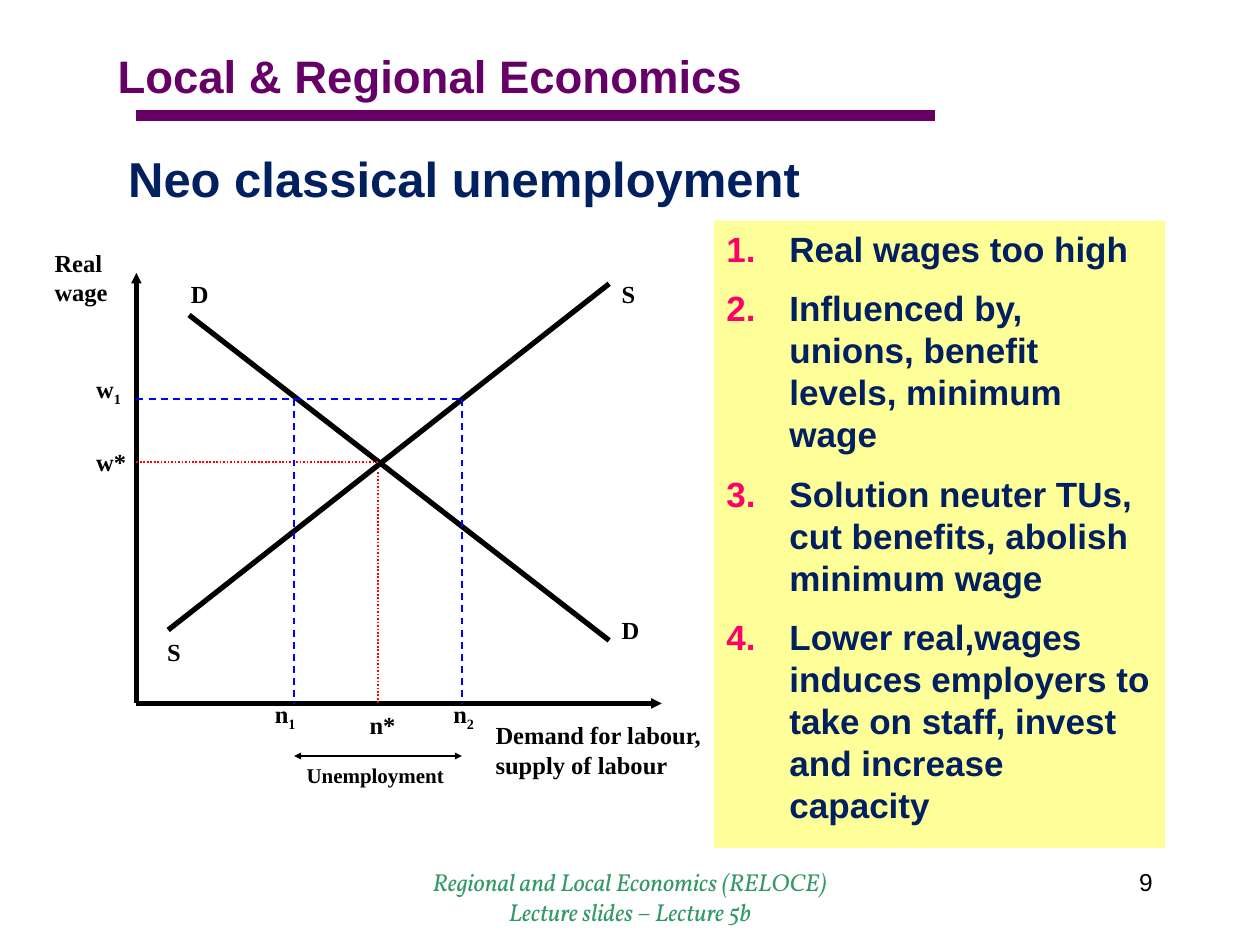
from lxml import etree
from pptx import Presentation
from pptx.dml.color import RGBColor
from pptx.enum.dml import MSO_LINE
from pptx.enum.shapes import MSO_CONNECTOR
from pptx.enum.text import MSO_ANCHOR, MSO_AUTO_SIZE, PP_ALIGN
from pptx.oxml.ns import qn
from pptx.util import Cm, Pt

STRAIGHT = MSO_CONNECTOR.STRAIGHT
DASH, DOT = MSO_LINE.DASH, MSO_LINE.ROUND_DOT
LEFT, CENTER, RIGHT = PP_ALIGN.LEFT, PP_ALIGN.CENTER, PP_ALIGN.RIGHT
TOP, MIDDLE = MSO_ANCHOR.TOP, MSO_ANCHOR.MIDDLE
FIXED = MSO_AUTO_SIZE.NONE

COLORS = {
    "ink": "000000", "plum": "660066", "navy": "002060", "cream": "FFFF99",
    "pink": "FF0066", "green": "339966", "red": "FF0000", "blue": "0000FF",
}

X0, Y0 = 2.75, 14.18
N1, N_EQ, N2 = 5.93, 7.62, 9.31
W1, W_EQ = 8.04, 9.31
GAP = 15.24

POINTS = [
    "Real wages too high",
    "Influenced by, unions, benefit levels, minimum wage",
    "Solution neuter TUs, cut benefits, abolish minimum wage",
    "Lower real,wages induces employers to take on staff, invest and increase capacity",
]

LABELS = [
    ("Real wage", 0.85, 4.87, 1.9),
    ("Demand for labour, supply of labour", 9.74, 14.4, 5.29),
    ("w*", 1.69, 8.89, 1.48),
    ("n*", 7.2, 14.18, 1.04),
    ("S", 3.12, 12.72, 0.9),
    ("S", 12.28, 5.5, 0.9),
    ("D", 12.28, 12.28, 0.9),
    ("D", 3.6, 5.5, 0.9),
]

INDEXED = [
    ("w", "1", 1.69, 7.41, 1.48),
    ("n", "1", 5.29, 13.97, 1.06),
    ("n", "2", 8.89, 13.97, 1.06),
]


def paint(name):
    """Return the named colour."""
    return RGBColor.from_string(COLORS[name])


def style(font, size, face, color, bold, italic):
    """Set the look of a font."""
    font.size, font.name = Pt(size), face
    font.bold, font.italic = bold, italic
    font.color.rgb = paint(color)


def place(shape, x, y, w, h):
    """Move and size a shape."""
    shape.left, shape.top, shape.width, shape.height = Cm(x), Cm(y), Cm(w), Cm(h)


def number(para):
    """Give a paragraph a coloured number and a hanging indent."""
    props = para._p.get_or_add_pPr()
    props.set("marL", str(Cm(1.27)))
    props.set("indent", str(-Cm(1.27)))
    tint = etree.SubElement(props, qn("a:buClr"))
    etree.SubElement(tint, qn("a:srgbClr"), val=COLORS["pink"])
    etree.SubElement(props, qn("a:buFont"), typeface="+mj-lt")
    etree.SubElement(props, qn("a:buAutoNum"), type="arabicPeriod")


def write(shape, *lines, size=14, face="Times New Roman", color="ink", bold=True,
          italic=False, align=LEFT, anchor=TOP, sub="", listed=False, gap=0):
    """Fill a shape with formatted paragraphs."""
    frame = shape.text_frame
    frame.word_wrap, frame.auto_size = True, FIXED
    frame.vertical_anchor = anchor
    for i, line in enumerate(lines):
        para = frame.add_paragraph() if i else frame.paragraphs[0]
        para.alignment = align
        para.space_before = Pt(gap if i else 0)
        if listed:
            number(para)
        para.add_run().text = line
        if sub:
            low = para.add_run()
            low.text = sub
            low.font._element.set("baseline", "-25000")
        for run in para.runs:
            style(run.font, size, face, color, bold, italic)


def label(slide, x, y, w, h, *lines, **look):
    """Add a text box."""
    box = slide.shapes.add_textbox(Cm(x), Cm(y), Cm(w), Cm(h))
    write(box, *lines, **look)


def rule(slide, x1, y1, x2, y2, color="ink", width=3, dash=None, head=False, tail=False):
    """Add a straight line, with arrowheads if asked."""
    line = slide.shapes.add_connector(STRAIGHT, Cm(x1), Cm(y1), Cm(x2), Cm(y2))
    line.line.color.rgb = paint(color)
    line.line.width = Pt(width)
    if dash:
        line.line.dash_style = dash
    stroke = line.line._get_or_add_ln()
    for tag, shown in (("a:headEnd", head), ("a:tailEnd", tail)):
        if shown:
            etree.SubElement(stroke, qn(tag), type="triangle", w="sm", len="sm")
    etree.SubElement(line._element.spPr, qn("a:effectLst"))


def graph(slide):
    """Draw the labour market diagram."""
    rule(slide, X0, 5.5, X0, Y0, head=True)
    rule(slide, X0, Y0, 13.34, Y0, tail=True)
    rule(slide, 3.81, 6.35, 12.28, 12.91)
    rule(slide, 3.39, 12.7, 12.28, 5.72)
    for ends in ((X0, W_EQ, N_EQ, W_EQ), (N_EQ, W_EQ + 0.21, N_EQ, Y0)):
        rule(slide, *ends, color="red", width=1, dash=DOT)
    for ends in ((X0, W1, N2, W1), (N2, W1, N2, Y0), (N1, W1, N1, Y0)):
        rule(slide, *ends, color="blue", width=1, dash=DASH)
    rule(slide, N1, GAP, N2, GAP, width=1, head=True, tail=True)
    for text, x, y, w in LABELS:
        label(slide, x, y, w, 1.45 if " " in text else 0.86, text)
    for text, sub, x, y, w in INDEXED:
        label(slide, x, y, w, 0.86, text, sub=sub)
    label(slide, N1, GAP, N2 - N1, 0.76, "Unemployment", size=12)


def main():
    """Build and save the slide."""
    deck = Presentation()
    deck.slide_width, deck.slide_height = Cm(25.4), Cm(19.05)
    slide = deck.slides.add_slide(deck.slide_layouts[1])
    title, body = slide.placeholders

    label(slide, 2.12, 0.85, 16.93, 1.38, "Local & Regional Economics",
          size=26, face="Arial", color="plum")
    rule(slide, X0, 2.33, 18.84, 2.33, color="plum", width=6)

    place(title, 2.33, 2.75, 19.05, 1.69)
    write(title, "Neo classical unemployment", size=28, face="Arial",
          color="navy", anchor=MIDDLE)

    graph(slide)

    place(body, 14.39, 4.45, 9.1, 12.65)
    body.fill.solid()
    body.fill.fore_color.rgb = paint("cream")
    write(body, *POINTS, size=20, face="Arial", color="navy", listed=True, gap=10)

    label(slide, 7.2, 17.36, 11, 1.27, "Regional and Local Economics (RELOCE)",
          "Lecture slides – Lecture 5b", face="Vollkorn", color="green",
          bold=False, italic=True, align=CENTER)
    label(slide, 18.2, 17.36, 5.29, 1.27, "9", face="Arial", bold=False, align=RIGHT)
    deck.save("out.pptx")


if __name__ == "__main__":
    main()
